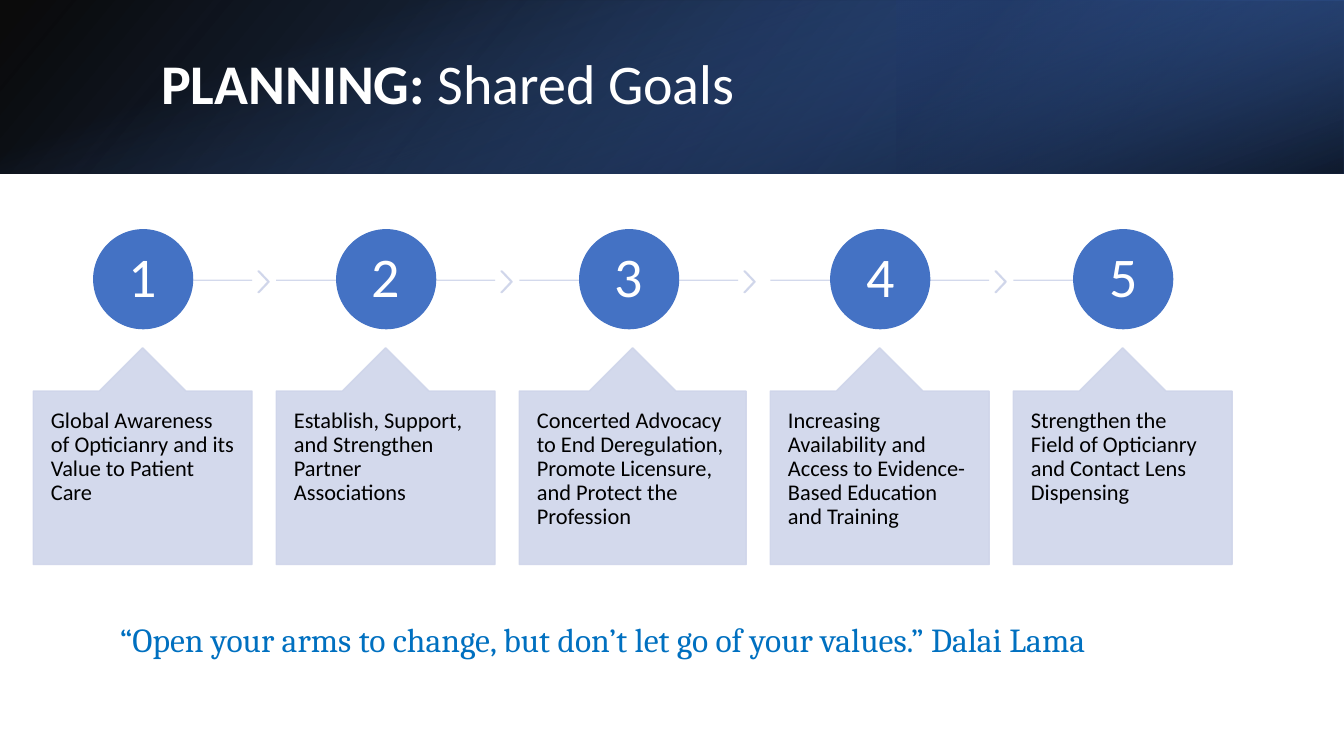
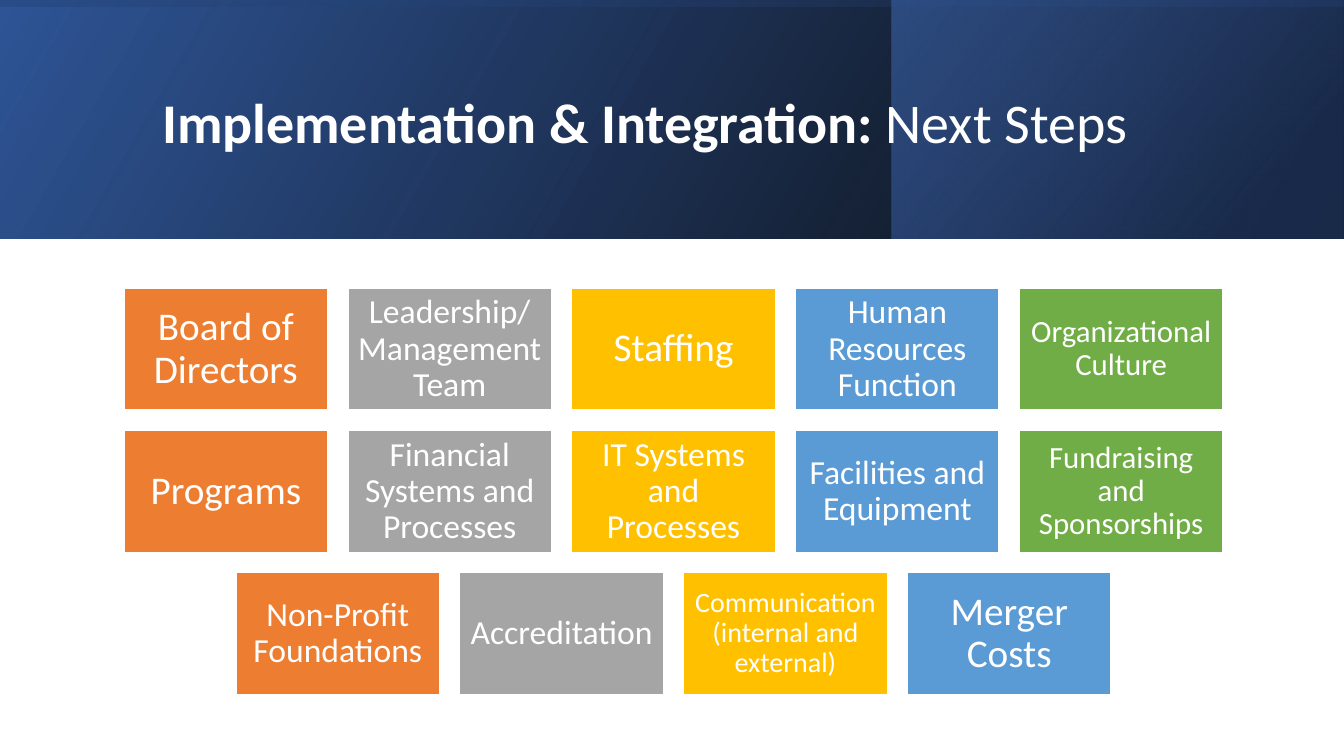
import lxml.etree
import pptx
import pptx.dml.color
import pptx.enum.shapes
import pptx.enum.text
import pptx.oxml.ns
import pptx.util

Inches, Pt = pptx.util.Inches, pptx.util.Pt
SHAPE = pptx.enum.shapes.MSO_SHAPE
ALIGN = pptx.enum.text.PP_ALIGN
ANCHOR = pptx.enum.text.MSO_ANCHOR
qn = pptx.oxml.ns.qn
rgb = pptx.dml.color.RGBColor.from_string

# Shared colours
WHITE, BLACK, BLUE, PALE, QUOTE = "FFFFFF", "000000", "4472C4", "CFD5EA", "0070C0"
NAVY, ROYAL = "203864", "2F5597"
TILES = ["ED7D31", "A5A5A5", "FFC000", "5B9BD5", "70AD47"]


def fade(sp, *opacities):
    """Set the opacity, in percent, of each colour of a shape in turn."""
    for color, opacity in zip(sp._element.spPr.iter(qn("a:srgbClr")), opacities):
        lxml.etree.SubElement(color, qn("a:alpha"), val=str(opacity * 1000))


def write(sp, runs, size, color, font="Calibri", align=ALIGN.LEFT,
          anchor=ANCHOR.MIDDLE, inset=None, spacing=0.9):
    """Fill a shape with one paragraph of (text, bold) runs."""
    tf = sp.text_frame
    tf.word_wrap = True
    tf.vertical_anchor = anchor
    if inset is not None:
        tf.margin_left = tf.margin_right = tf.margin_top = tf.margin_bottom = inset
    p = tf.paragraphs[0]
    p.alignment = align
    p.line_spacing = spacing
    for text, bold in runs:
        r = p.add_run()
        r.text = text
        r.font.name, r.font.size, r.font.bold = font, Pt(size), bold
        r.font.color.rgb = rgb(color)


prs = pptx.Presentation()
prs.slide_width, prs.slide_height = Inches(13.33), Inches(7.5)

# Header bands: left, top, width, height, rotation, flip, angle,
# then (position, colour, opacity) for both gradient stops
headers = [
    ([("PLANNING:", True), (" Shared Goals", False)], (1.5, 0.38, 10.98, 0.96), [
        (0, 0, 13.33, 1.72, 0, True, 140, (0, BLACK, 96), (1, ROYAL, 100)),
        (8.89, 0, 4.44, 1.72, 180, True, 320, (0.19, NAVY, 68), (1, BLUE, 79)),
        (5.8, -5.8, 1.72, 13.33, 90, False, 340, (0.23, BLUE, 0), (0.99, BLACK, 74)),
    ]),
    ([("Implementation & Integration:", True), (" Next Steps", False)],
     (1.51, 0.38, 10.63, 1.72), [
        (0, 0, 13.33, 2.37, 0, True, 330, (0, BLACK, 96), (1, ROYAL, 100)),
        (8.84, 0, 4.48, 2.37, 0, True, 320, (0.19, NAVY, 68), (1, BLUE, 48)),
        (5.48, -5.48, 2.37, 13.33, 270, True, 350, (0.23, ROYAL, 16), (0.99, BLACK, 45)),
    ]),
]
for title, title_box, bands in headers:
    s = prs.slides.add_slide(prs.slide_layouts[6])
    for x, y, w, h, rotation, flip, angle, *stops in bands:
        sp = s.shapes.add_shape(SHAPE.RECTANGLE, Inches(x), Inches(y), Inches(w), Inches(h))
        sp.shadow.inherit = False
        sp.rotation = rotation
        if flip:
            sp._element.spPr.find(qn("a:xfrm")).set("flipH", "1")
        sp.fill.gradient()
        sp.fill.gradient_angle = 360 - angle
        for stop, (position, color, _) in zip(sp.fill.gradient_stops, stops):
            stop.position = position
            stop.color.rgb = rgb(color)
        fade(sp, *[opacity for _, _, opacity in stops])
        sp.line.fill.background()
    write(s.shapes.add_textbox(*map(Inches, title_box)), title, 40, WHITE)

# Slide 1: quotation
s = prs.slides[0]
sp = s.shapes.add_textbox(Inches(1.09), Inches(6.09), Inches(11.05), Inches(0.5))
write(sp, [("“Open your arms to change, but don’t let go of your values.” Dalai Lama", None)],
      24, QUOTE, font="Cambria", anchor=ANCHOR.TOP, spacing=1)

# Slide 1: numbered goals, left to right
goals = [
    ("Global Awareness of Opticianry and its Value to Patient Care", 2.17),
    ("Establish, Support, and Strengthen Partner Associations", 2.17),
    ("Concerted Advocacy to End Deregulation, Promote Licensure, and Protect the Profession", 2.25),
    ("Increasing Availability and Access to Evidence-Based Education and Training", 2.17),
    ("Strengthen the Field of Opticianry and Contact Lens Dispensing", 2.17),
]
x = 0.33
for number, (goal, width) in enumerate(goals, 1):
    first, last = number == 1, number == len(goals)

    # Connecting line
    start = x + 1.21 if first else x
    end = x + 1.08 if last else x + 2.17
    line = s.shapes.add_connector(pptx.enum.shapes.MSO_CONNECTOR.STRAIGHT,
                                  Inches(start), Inches(2.78), Inches(end), Inches(2.78))
    line.line.color.rgb = rgb(PALE)
    line.line.width = Pt(1)
    fade(line, 90)
    lxml.etree.SubElement(line._element.spPr, qn("a:effectLst"))

    # Chevron, circle and callout
    parts = [
        (SHAPE.OVAL, x + 0.6, 2.28, 0.98, 0.98, BLUE, 100, []),
        (SHAPE.UP_ARROW_CALLOUT, x, 3.45, width, 2.15, PALE, 90, [0.5, 0.2, 0.2, 0.8]),
    ]
    if not last:
        parts.insert(0, (SHAPE.CHEVRON, x + 2.23, 2.69, 0.11, 0.21, PALE, 90, [0.9]))
    for kind, left, top, w, h, color, opacity, adjustments in parts:
        sp = s.shapes.add_shape(kind, Inches(left), Inches(top), Inches(w), Inches(h))
        sp.shadow.inherit = False
        sp.fill.solid()
        sp.fill.fore_color.rgb = sp.line.color.rgb = rgb(color)
        sp.line.width = Pt(1)
        fade(sp, opacity, opacity)
        for i, value in enumerate(adjustments):
            sp.adjustments[i] = value
        if kind == SHAPE.OVAL:
            write(sp, [(str(number), None)], 40, WHITE, align=ALIGN.CENTER, inset=Inches(0.04))
        elif kind == SHAPE.UP_ARROW_CALLOUT:
            write(sp, [(goal, None)], 16, BLACK, anchor=ANCHOR.TOP, inset=Inches(0.175))
    x += width + 0.24

# Slide 2: rows of tiles, each row centred
s = prs.slides[1]
rows = [
    [("Board of Directors", 28), ("Leadership/Management Team", 24), ("Staffing", 28),
     ("Human Resources Function", 24), ("Organizational Culture", 22)],
    [("Programs", 28), ("Financial Systems and Processes", 24), ("IT Systems and Processes", 24),
     ("Facilities and Equipment", 24), ("Fundraising and Sponsorships", 22)],
    [("Non-Profit Foundations", 24), ("Accreditation", 24),
     ("Communication (internal and external)", 20), ("Merger Costs", 28)],
]
tile_w, tile_h, gap, centre = 2.02, 1.21, 0.2, 6.68
for row, tiles in enumerate(rows):
    left = centre - (len(tiles) * (tile_w + gap) - gap) / 2
    for col, (text, size) in enumerate(tiles):
        sp = s.shapes.add_shape(SHAPE.RECTANGLE, Inches(left + col * (tile_w + gap)),
                                Inches(2.86 + row * (tile_h + gap)), Inches(tile_w), Inches(tile_h))
        sp.shadow.inherit = False
        sp.fill.solid()
        sp.fill.fore_color.rgb = rgb(TILES[col])
        sp.line.color.rgb = rgb(WHITE)
        sp.line.width = Pt(1)
        write(sp, [(text, None)], size, WHITE, align=ALIGN.CENTER, inset=Pt(size * 0.3))

prs.save("out.pptx")
